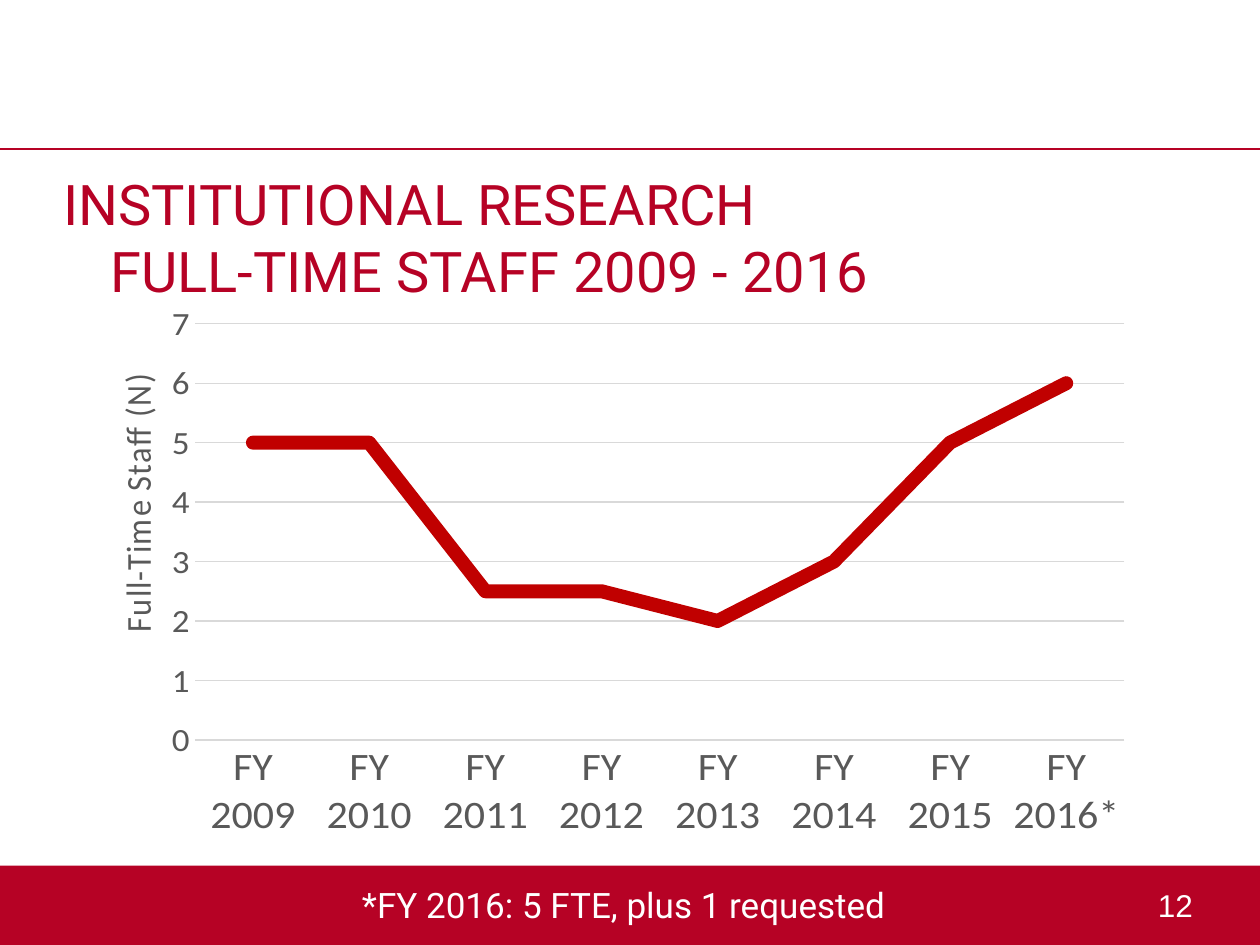
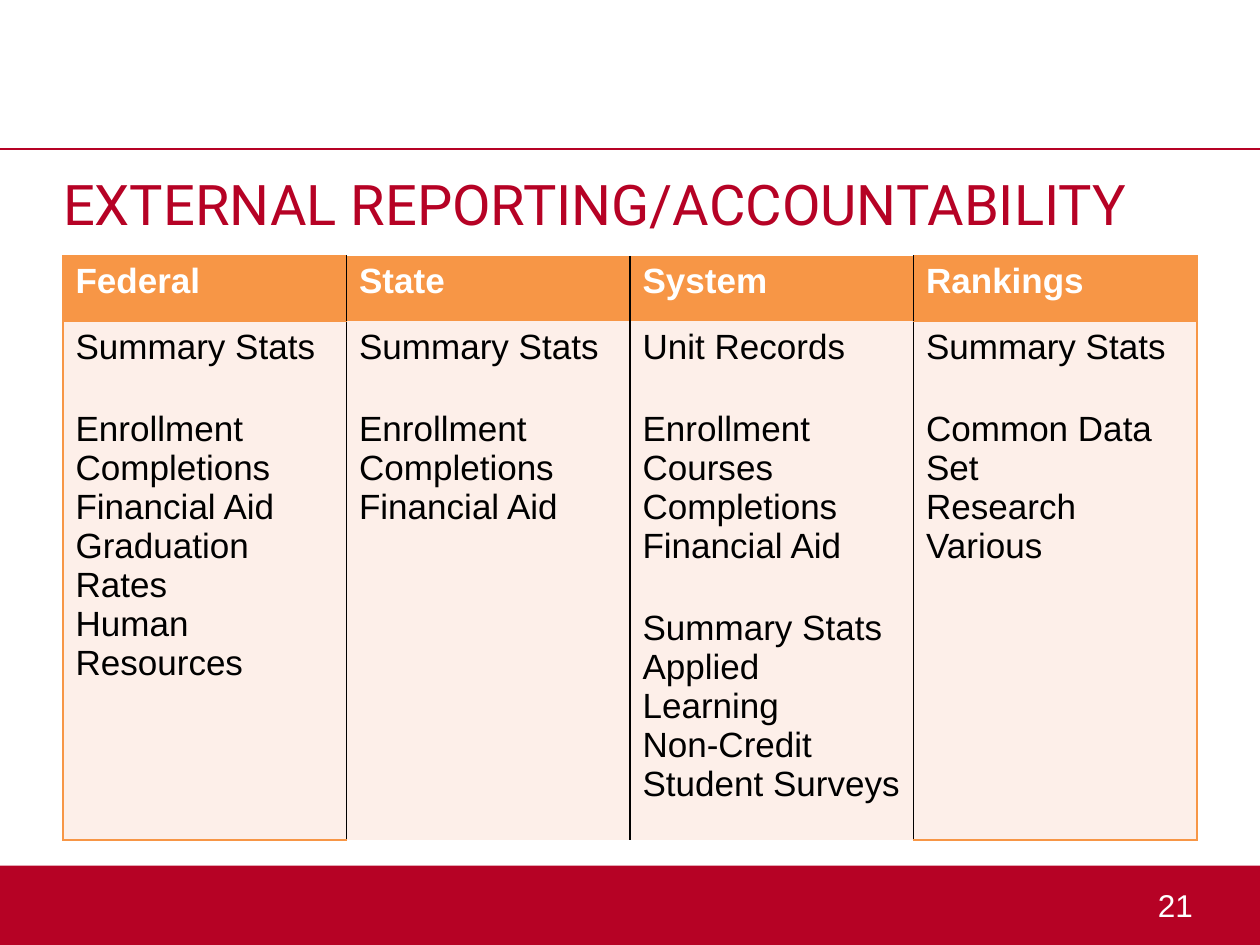
from pptx import Presentation
from pptx.chart.data import CategoryChartData
from pptx.dml.color import RGBColor
from pptx.enum.chart import XL_CHART_TYPE, XL_TICK_MARK
from pptx.enum.shapes import MSO_CONNECTOR, MSO_SHAPE
from pptx.enum.text import MSO_ANCHOR, MSO_AUTO_SIZE, PP_ALIGN
from pptx.oxml import parse_xml
from pptx.oxml.ns import nsdecls, qn
from pptx.util import Cm, Pt

RED = RGBColor(0xB6, 0x02, 0x25)
CRIMSON = RGBColor(0xC0, 0x00, 0x00)
ORANGE = RGBColor(0xF7, 0x96, 0x46)
PEACH = RGBColor(0xFD, 0xEF, 0xE9)
WHITE = RGBColor(0xFF, 0xFF, 0xFF)
BLACK = RGBColor(0x00, 0x00, 0x00)
GRAY = RGBColor(0x59, 0x59, 0x59)
PALE = RGBColor(0xD9, 0xD9, 0xD9)
PLAIN = "{2D5ABB26-0587-4C30-8999-92F81FD0307C}"

YEARS = [f"FY {year}" for year in range(2009, 2016)] + ["FY 2016*"]
STAFF = [5, 5, 2.5, 2.5, 2, 3, 5, 6]

REPORTS = {
    "Federal": [["Summary Stats"],
                ["Enrollment", "Completions", "Financial Aid",
                 "Graduation Rates", "Human Resources"]],
    "State": [["Summary Stats"],
              ["Enrollment", "Completions", "Financial Aid"]],
    "System": [["Unit Records"],
               ["Enrollment", "Courses", "Completions", "Financial Aid"],
               ["Summary Stats", "Applied Learning", "Non-Credit",
                "Student Surveys"]],
    "Rankings": [["Summary Stats"],
                 ["Common Data Set", "Research", "Various"]],
}


class Deck:
    """Hold the shared style and the current slide."""

    def __init__(self):
        self.show = Presentation()
        self.show.slide_width = Cm(25.4)
        self.show.slide_height = Cm(19.05)
        self.slide = None

    def page(self, number, lines, width=22.86):
        self.slide = self.show.slides.add_slide(self.show.slide_layouts[5])
        self.band()
        self.rule()
        self.text(str(number), 23.09, 17.73, 1.55, 1.02, 18, "Arial")
        self.title(lines, width)

    def band(self):
        band = self.slide.shapes.add_shape(
            MSO_SHAPE.RECTANGLE, Cm(0), Cm(17.45), Cm(25.4), Cm(1.6))
        band.shadow.inherit = False
        band.fill.solid()
        band.fill.fore_color.rgb = RED
        band.line.fill.background()

    def rule(self):
        rule = self.slide.shapes.add_connector(
            MSO_CONNECTOR.STRAIGHT, Cm(0), Cm(3), Cm(25.4), Cm(3))
        rule.line.color.rgb = RED
        rule.line.width = Pt(1)
        rule._element.spPr.append(parse_xml(f"<a:effectLst {nsdecls('a')}/>"))

    def run(self, para, words, size, face, color, bold=False):
        run = para.add_run()
        run.text = words
        self.font(run.font, size, face, color)
        run.font.bold = bold

    def font(self, font, size, face, color):
        font.size = Pt(size)
        font.name = face
        font.color.rgb = color

    def title(self, lines, width):
        title = self.slide.shapes.title
        title.left, title.top = Cm(1.27), Cm(3.28)
        title.width, title.height = Cm(width), Cm(2.21)
        frame = title.text_frame
        frame.margin_left = frame.margin_right = 0
        frame.vertical_anchor = MSO_ANCHOR.TOP
        frame.auto_size = MSO_AUTO_SIZE.NONE
        frame.word_wrap = True
        para = frame.paragraphs[0]
        para.alignment = PP_ALIGN.LEFT
        props = para._p.get_or_add_pPr()
        props.set("marL", str(Cm(0.95)))
        props.set("indent", str(-Cm(0.95)))
        for order, line in enumerate(lines):
            if order:
                para.add_line_break()
            self.run(para, line, 32, "Roboto", RED)

    def text(self, words, left, top, width, height, size, face,
             align=PP_ALIGN.LEFT, inset=0.25):
        box = self.slide.shapes.add_textbox(
            Cm(left), Cm(top), Cm(width), Cm(height))
        frame = box.text_frame
        frame.word_wrap = True
        frame.margin_left = Cm(inset)
        para = frame.paragraphs[0]
        para.alignment = align
        self.run(para, words, size, face, WHITE)

    def layout(self, parent, index, **parts):
        old = parent.find(qn("c:layout"))
        if old is not None:
            parent.remove(old)
        body = "".join(f'<c:{key} val="{val}"/>' for key, val in parts.items())
        parent.insert(index, parse_xml(
            f"<c:layout {nsdecls('c')}><c:manualLayout>{body}"
            "</c:manualLayout></c:layout>"))

    def chart(self, cats, vals, label):
        data = CategoryChartData()
        data.categories = cats
        data.add_series("Series 1", vals)
        chart = self.slide.shapes.add_chart(
            XL_CHART_TYPE.LINE, Cm(1.27), Cm(5.97), Cm(21.79), Cm(10.95),
            data).chart
        chart.has_legend = chart.has_title = False
        self.font(chart.font, 20, "Calibri", BLACK)
        plot = chart.plots[0]
        plot.vary_by_categories = False
        series = plot.series[0]
        series.smooth = False
        series.marker.style = None
        series.format.line.color.rgb = CRIMSON
        series.format.line.width = Pt(8)
        series.format.line._get_or_add_ln().set("cap", "rnd")
        self.layout(chart._chartSpace.chart.plotArea, 0, layoutTarget="inner",
                    xMode="edge", yMode="edge",
                    x=0.122, y=0.055, w=0.86, h=0.828)
        self.axes(chart, label)

    def axes(self, chart, label):
        base, side = chart.category_axis, chart.value_axis
        for axis, size in ((base, 24), (side, 20)):
            axis.major_tick_mark = axis.minor_tick_mark = XL_TICK_MARK.NONE
            self.font(axis.tick_labels.font, size, "Calibri", GRAY)
        side.minimum_scale, side.maximum_scale, side.major_unit = 0, 7, 1
        side.format.line.fill.background()
        side.has_major_gridlines = True
        for line in (base.format.line, side.major_gridlines.format.line):
            line.color.rgb = PALE
            line.width = Pt(0.75)
        frame = side.axis_title.text_frame
        self.run(frame.paragraphs[0], label, 20, "Calibri", GRAY)
        turn = frame._txBody.bodyPr
        turn.set("rot", "-5400000")
        turn.set("vert", "horz")
        self.layout(side.axis_title._element, 1, xMode="edge", yMode="edge",
                    x=0.04, y=0.18)

    def table(self, columns):
        frame = self.slide.shapes.add_table(
            2, len(columns), Cm(1.27), Cm(5.16), Cm(22.86), Cm(11.1))
        table = frame.table
        table.first_row = table.horz_banding = False
        table._tbl.tblPr.find(qn("a:tableStyleId")).text = PLAIN
        table.rows[0].height, table.rows[1].height = Cm(1.32), Cm(9.78)
        last = len(columns) - 1
        for col, (head, groups) in enumerate(columns.items()):
            edges = {"L": BLACK if col else ORANGE,
                     "R": BLACK if col < last else ORANGE}
            if col in (0, last):
                edges.update(T=ORANGE, B=ORANGE)
            self.cell(table.cell(0, col), [[head]], ORANGE, WHITE, edges, True)
            self.cell(table.cell(1, col), groups, PEACH, BLACK, edges)

    def cell(self, cell, groups, fill, color, edges, bold=False):
        cell.fill.solid()
        cell.fill.fore_color.rgb = fill
        para = None
        for group in groups:
            for order, words in enumerate(group):
                if para is None:
                    para = cell.text_frame.paragraphs[0]
                else:
                    para = cell.text_frame.add_paragraph()
                    para.space_before = Pt(0 if order else 24.5)
                self.run(para, words, 20, "Arial", color, bold)
        props = cell._tc.get_or_add_tcPr()
        for order, (edge, tint) in enumerate(edges.items()):
            props.insert(order, parse_xml(
                f'<a:ln{edge} {nsdecls("a")} w="{Pt(1)}"><a:solidFill>'
                f'<a:srgbClr val="{tint}"/></a:solidFill></a:ln{edge}>'))


def main():
    deck = Deck()
    deck.page(12, ["INSTITUTIONAL RESEARCH", "FULL-TIME STAFF 2009 - 2016"])
    deck.text("*FY 2016: 5 FTE, plus 1 requested", 0, 17.68, 25.4, 1.37,
              20, "Roboto", PP_ALIGN.CENTER, 0)
    deck.chart(YEARS, STAFF, "Full-Time Staff (N)")
    deck.page(21, ["EXTERNAL REPORTING/ACCOUNTABILITY"], 23.44)
    deck.table(REPORTS)
    deck.show.save("out.pptx")


if __name__ == "__main__":
    main()
